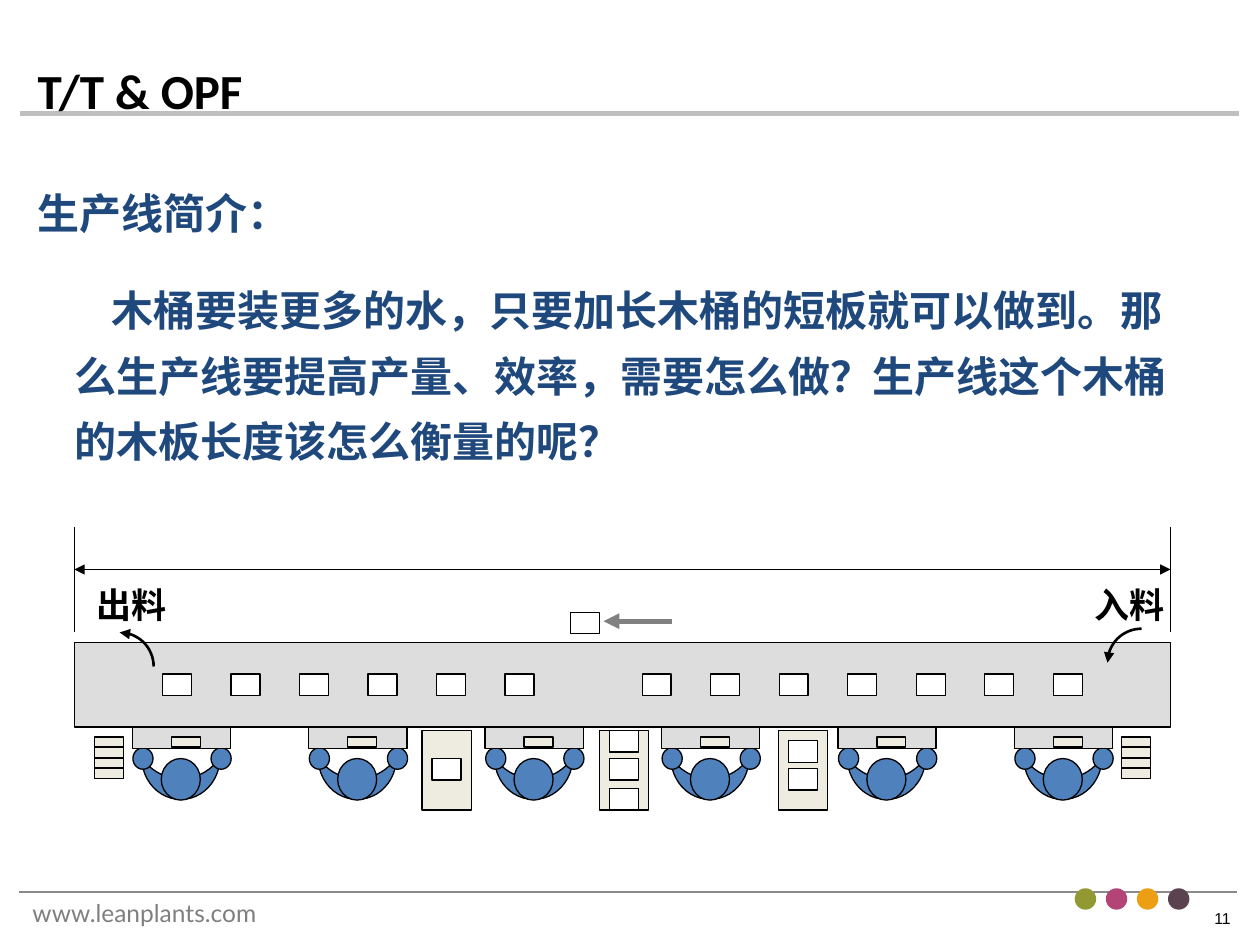
import math

import lxml.etree
import pptx
import pptx.dml.color
import pptx.enum.shapes
import pptx.enum.text
import pptx.oxml.ns
import pptx.util

Inches = pptx.util.Inches
Pt = pptx.util.Pt
qn = pptx.oxml.ns.qn
SHAPE = pptx.enum.shapes.MSO_SHAPE
ANCHOR = pptx.enum.text.MSO_ANCHOR
FIT = pptx.enum.text.MSO_AUTO_SIZE

INK = {
    "black": "000000", "white": "FFFFFF", "navy": "1F497D", "blue": "4F81BD",
    "belt": "DDDDDD", "cream": "EEECE1", "gray": "808080", "site": "7F7F7F",
    "rule": "BFBFBF", "foot": "8B8B8B", "olive": "939932", "pink": "B24476",
    "gold": "EC9F14", "plum": "5C414F",
}


def tint(name):
    return pptx.dml.color.RGBColor.from_string(INK[name])


def text(slide, words, at, size=24, font="Arial", color="black", bold=False,
         wrap=True, grow=True, middle=False, space=None, indent=0):
    frame = slide.shapes.add_textbox(*map(Inches, at)).text_frame
    frame.word_wrap = wrap
    frame.auto_size = FIT.SHAPE_TO_FIT_TEXT if grow else FIT.NONE
    frame.vertical_anchor = ANCHOR.MIDDLE if middle else ANCHOR.TOP
    para = frame.paragraphs[0]
    if space:
        para.line_spacing = space
    if indent:
        props = para._p.get_or_add_pPr()
        props.set("marL", "0")
        props.set("indent", str(Inches(indent)))
    run = para.add_run()
    run.text = words
    run.font.name = font
    run.font.size = Pt(size)
    run.font.bold = bold
    run.font.color.rgb = tint(color)
    if not words.isascii():
        east = lxml.etree.SubElement(run.font._element, qn("a:ea"))
        east.set("typeface", "Noto Sans CJK SC")


def stroke(shape, color, width, ends=()):
    shape.line.color.rgb = tint(color)
    shape.line.width = Pt(width)
    edge = shape._element.spPr.find(qn("a:ln"))
    for end in ends:
        lxml.etree.SubElement(edge, qn(f"a:{end}End")).set("type", "triangle")


def line(slide, start, stop, color="black", width=0.75, ends=()):
    kind = pptx.enum.shapes.MSO_CONNECTOR.STRAIGHT
    rule = slide.shapes.add_connector(kind, *map(Inches, start + stop))
    stroke(rule, color, width, ends)
    lxml.etree.SubElement(rule._element.spPr, qn("a:effectLst"))


def block(slide, at, fill, kind=SHAPE.RECTANGLE, turn=0, edge=True):
    shape = slide.shapes.add_shape(kind, *map(Inches, at))
    shape.shadow.inherit = False
    shape.rotation = turn
    shape.fill.solid()
    shape.fill.fore_color.rgb = tint(fill)
    if edge:
        stroke(shape, "black", 0.75)
    else:
        shape.line.fill.background()
    return shape


def curve(slide, hub, size, first, last, steps=16):
    spots = []
    for i in range(steps + 1):
        angle = math.radians(first + (last - first) * i / steps)
        spots.append((Inches(hub[0] + size * math.cos(angle)),
                      Inches(hub[1] - size * math.sin(angle))))
    draft = slide.shapes.build_freeform(*spots[0])
    draft.add_line_segments(spots[1:], close=False)
    shape = draft.convert_to_shape()
    shape.shadow.inherit = False
    shape.fill.background()
    stroke(shape, "black", 1.5, ["head"])


def item(slide, left, top):
    block(slide, (left, top, 0.23, 0.17), "white")


def worker(slide, left):
    arms = block(slide, (left + 0.22, 5.87, 0.33, 0.62), "blue", SHAPE.MOON, 270)
    arms.adjustments[0] = 0.5
    block(slide, (left + 0.22, 6.03, 0.33, 0.31), "blue", SHAPE.OVAL, 270)
    for hand in (left, left + 0.62):
        block(slide, (hand, 5.94, 0.17, 0.16), "blue", SHAPE.OVAL, 270)
    block(slide, (left, 5.77, 0.78, 0.17), "belt")
    block(slide, (left + 0.31, 5.85, 0.23, 0.08), "cream")


def stack(slide, left):
    for i in range(4):
        block(slide, (left, 5.85 + 0.25 / 3 * i, 0.23, 0.08), "cream")


def buffer(slide, left, tops):
    block(slide, (left, 5.8, 0.39, 0.63), "cream")
    for top in tops:
        item(slide, left + 0.08, top)


def frame(slide):
    line(slide, (0.15, 7.08), (9.82, 7.08), "foot", 1)
    line(slide, (0.16, 0.9), (9.83, 0.9), "rule", 3)
    text(slide, "www.leanplants.com", (0.16, 7.08, 2.34, 0.34), size=14,
         font="Lato", color="site")
    text(slide, "11", (9.54, 7.16, 0.37, 0.27), size=9, wrap=False)
    text(slide, "T/T & OPF", (0.2, 0.44, 8.43, 0.55), size=28, font="Calibri",
         bold=True, grow=False, middle=True)
    for i, color in enumerate(("olive", "pink", "gold", "plum")):
        block(slide, (8.53 + 0.74 / 3 * i, 7.05, 0.17, 0.17), color,
              SHAPE.OVAL, edge=False)


def plant(slide):
    block(slide, (0.59, 5.1, 8.7, 0.67), "belt")
    for i in range(6):
        worker(slide, 1.05 + 1.4 * i)
    for left in (0.75, 8.9):
        stack(slide, left)
    for i in range(14):
        if i != 6:
            item(slide, 1.29 + 7.07 / 13 * i, 5.35)
    item(slide, 4.53, 4.86)
    line(slide, (4.79, 4.93), (5.33, 4.93), "gray", 3, ["head"])
    for words, left in (("入料", 8.59), ("出料", 0.67)):
        text(slide, words, (left, 4.58, 0.76, 0.43), size=20, bold=True,
             wrap=False)
    for left in (0.59, 9.29):
        line(slide, (left, 4.18), (left, 5.02))
    line(slide, (0.59, 4.52), (9.29, 4.52), ends=["head", "tail"])
    curve(slide, (9.06, 5.26), 0.27, 180, 90)
    curve(slide, (0.95, 5.29), 0.27, 90, 0)
    buffer(slide, 4.76, (5.8, 6.02, 6.26))
    buffer(slide, 6.18, (5.88, 6.1))
    buffer(slide, 3.35, (6.02,))


def main():
    deck = pptx.Presentation()
    deck.slide_width = Inches(10)
    deck.slide_height = Inches(7.5)
    slide = deck.slides.add_slide(deck.slide_layouts[6])
    frame(slide)
    text(slide, "生产线简介：", (0.2, 1.44, 5.91, 0.5), color="navy", bold=True)
    text(slide, "木桶要装更多的水，只要加长木桶的短板就可以做到。"
         "那么生产线要提高产量、效率，需要怎么做？"
         "生产线这个木桶的木板长度该怎么衡量的呢？",
         (0.49, 2.09, 9.08, 1.66), color="navy", bold=True, space=1.3,
         indent=0.3)
    plant(slide)
    deck.save("out.pptx")


if __name__ == "__main__":
    main()
